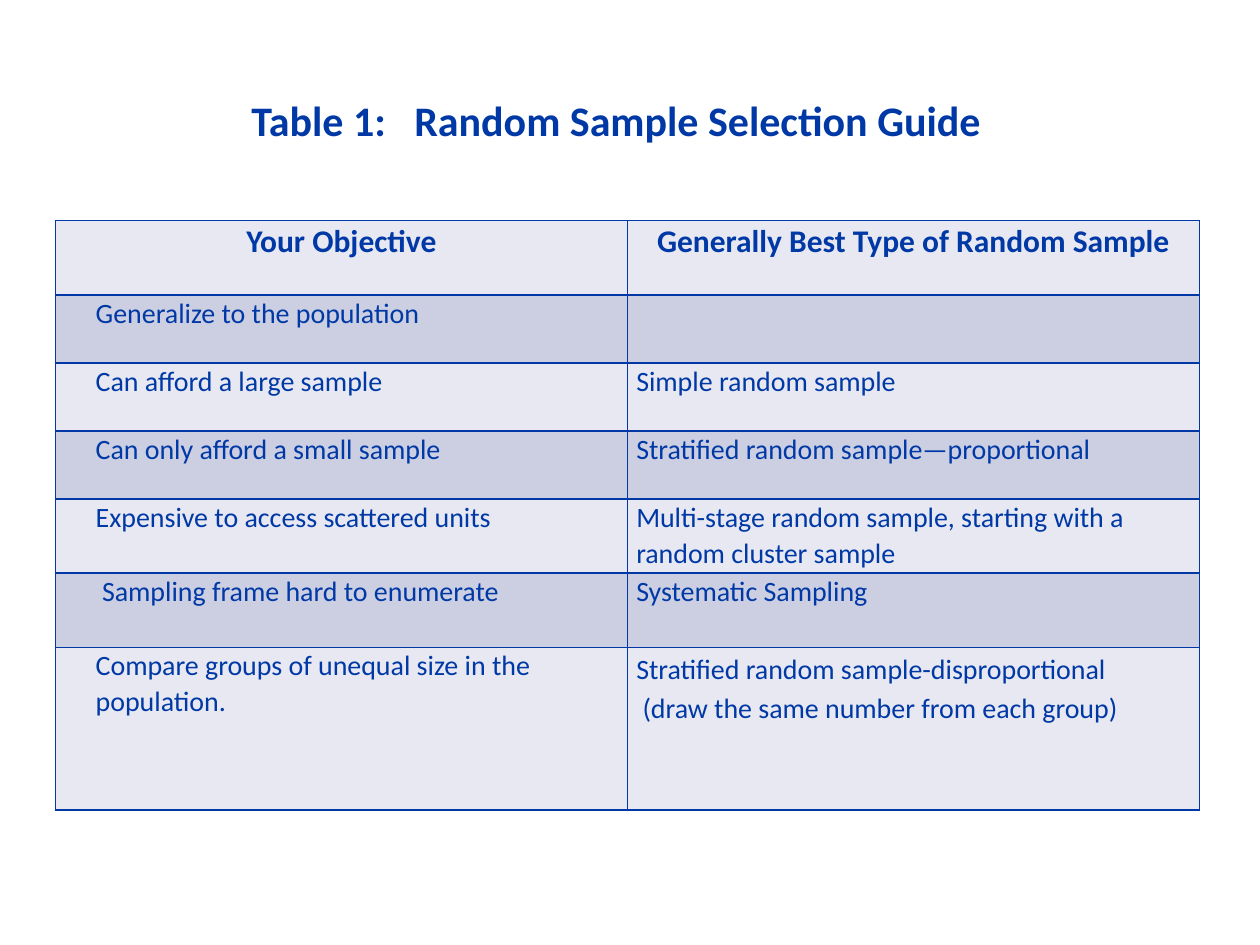
from lxml import etree
from pptx import Presentation
from pptx.dml.color import RGBColor
from pptx.enum.text import MSO_ANCHOR, PP_ALIGN
from pptx.oxml.ns import qn
from pptx.util import Inches, Pt

LEFT, CENTER = PP_ALIGN.LEFT, PP_ALIGN.CENTER
BOTTOM = MSO_ANCHOR.BOTTOM
BLUE = RGBColor(0x00, 0x39, 0xA6)
PALE = RGBColor(0xE7, 0xE8, 0xF1)
LAVENDER = RGBColor(0xCC, 0xCE, 0xE1)
FONT = "Calibri"
BORDER_SIDES = ("a:lnL", "a:lnR", "a:lnT", "a:lnB")

TITLE = "Table 1:   Random Sample Selection Guide"
HEADINGS = ("Your Objective", "Generally Best Type of Random Sample")
GUIDE = [
    ("Generalize to the population", []),
    ("Can afford a large sample", ["Simple random sample"]),
    ("Can only afford a small sample", ["Stratified random sample—proportional"]),
    ("Expensive to access scattered units",
     ["Multi-stage random sample, starting with a random cluster sample"]),
    ("Sampling frame hard to enumerate", ["Systematic Sampling"]),
    ("Compare groups of unequal size in the population.",
     ["Stratified random sample-disproportional",
      "(draw the same number from each group)"]),
]
ROW_HEIGHTS = (0.59, 0.54, 0.54, 0.54, 0.59, 0.59, 1.29)
COLUMN_WIDTH = 4.54
OBJECTIVE_INDENT = 0.25
EXTRA_INDENTS = {
    "Sampling frame hard to enumerate": 0.05,
    "(draw the same number from each group)": 0.05,
}


def write(frame, lines, size=16, bold=False, align=LEFT, spacing=1.05, indent=0):
    for index, line in enumerate(lines):
        paragraph = frame.paragraphs[0] if index == 0 else frame.add_paragraph()
        paragraph.alignment = align
        paragraph.line_spacing = spacing
        margin = Inches(indent + EXTRA_INDENTS.get(line, 0))
        properties = paragraph._p.get_or_add_pPr()
        properties.set("marL", str(margin))
        properties.set("indent", "0")
        run = paragraph.add_run()
        run.text = line
        run.font.name = FONT
        run.font.size = Pt(size)
        run.font.bold = bold
        run.font.color.rgb = BLUE


def style_cell(cell, fill):
    cell.margin_left = cell.margin_right = Inches(0.07)
    cell.margin_top = cell.margin_bottom = 0
    properties = cell._tc.get_or_add_tcPr()
    for side in BORDER_SIDES:
        border = etree.SubElement(properties, qn(side), w=str(Pt(1)))
        solid = etree.SubElement(border, qn("a:solidFill"))
        etree.SubElement(solid, qn("a:srgbClr"), val=str(BLUE))
    cell.fill.solid()
    cell.fill.fore_color.rgb = fill


def main():
    presentation = Presentation()
    presentation.slide_width, presentation.slide_height = Inches(10), Inches(7.5)
    slide = presentation.slides.add_slide(presentation.slide_layouts[5])

    title = slide.shapes.title
    title.left, title.top = Inches(0.5), Inches(0.75)
    title.width, title.height = Inches(9), Inches(0.87)
    title.text_frame.vertical_anchor = BOTTOM
    title.text_frame.margin_right = Inches(0.32)
    title.text_frame.margin_bottom = Inches(0.47)
    write(title.text_frame, [TITLE], size=24, bold=True, align=CENTER, spacing=Pt(30))

    guide = slide.shapes.add_table(
        len(ROW_HEIGHTS), len(HEADINGS), Inches(0.44), Inches(1.75),
        Inches(COLUMN_WIDTH * len(HEADINGS)), Inches(sum(ROW_HEIGHTS))).table
    for column in guide.columns:
        column.width = Inches(COLUMN_WIDTH)
    for index, height in enumerate(ROW_HEIGHTS):
        guide.rows[index].height = Inches(height)
        for cell in guide.rows[index].cells:
            style_cell(cell, LAVENDER if index % 2 else PALE)

    for column, heading in enumerate(HEADINGS):
        write(guide.cell(0, column).text_frame, [heading], size=18, bold=True, align=CENTER)
    for row, (objective, sample_types) in enumerate(GUIDE, start=1):
        write(guide.cell(row, 0).text_frame, [objective], indent=OBJECTIVE_INDENT)
        write(guide.cell(row, 1).text_frame, sample_types,
              spacing=1.15 if len(sample_types) > 1 else 1.05)

    presentation.save("out.pptx")


if __name__ == "__main__":
    main()
